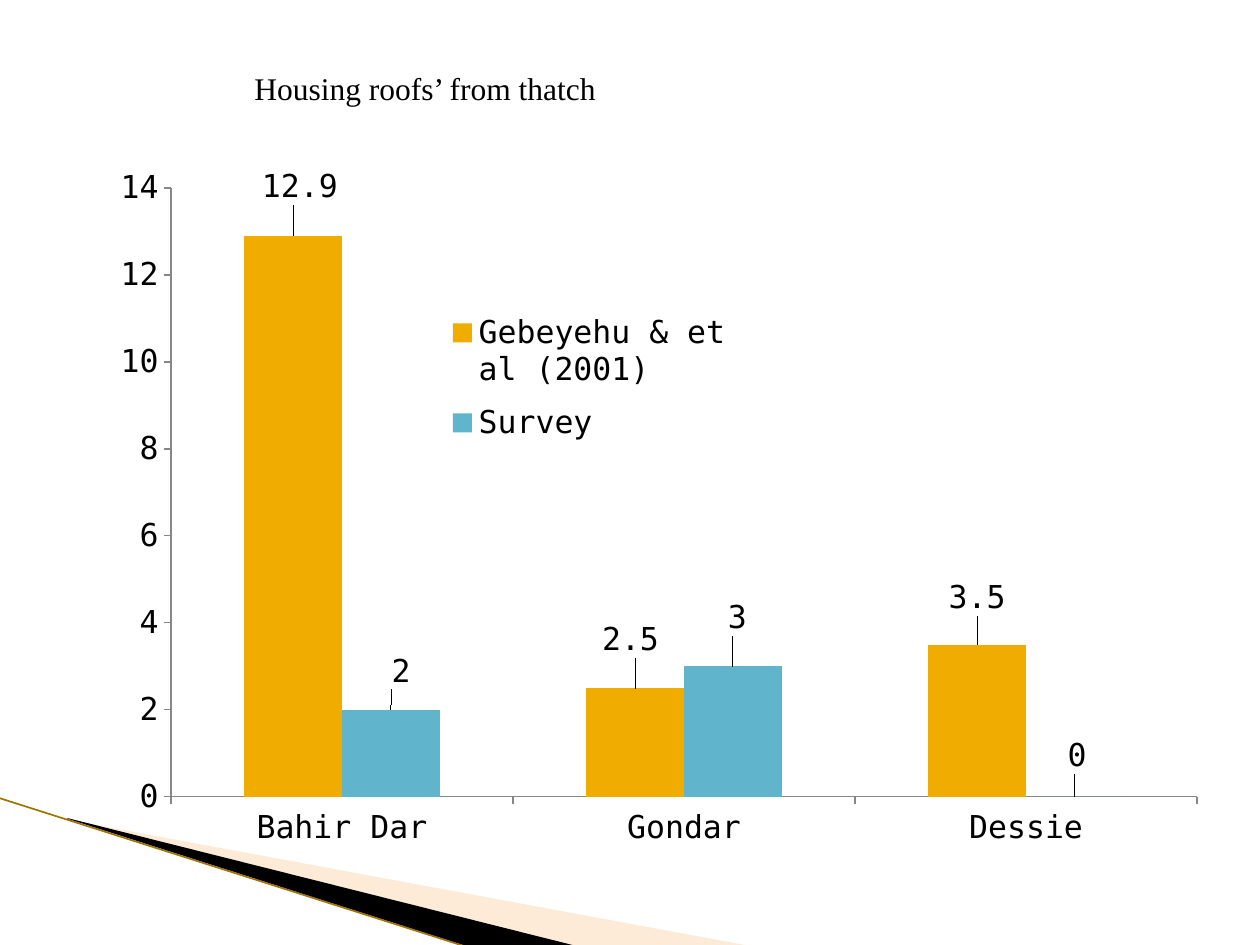
from dataclasses import dataclass
from typing import Any

from lxml.etree import SubElement
from pptx import Presentation
from pptx.chart.data import CategoryChartData
from pptx.dml.color import RGBColor
from pptx.enum.chart import XL_CHART_TYPE, XL_LABEL_POSITION, XL_LEGEND_POSITION, XL_TICK_MARK
from pptx.enum.text import MSO_AUTO_SIZE
from pptx.oxml import parse_xml
from pptx.oxml.ns import nsdecls, qn
from pptx.util import Pt

SCALE = 914400 / 126


@dataclass(frozen=True)
class Theme:
    text: str = "000000"
    axis: str = "878787"
    peach: str = "FCCF9B"
    black: str = "000000"
    edge: str = "A07400"
    gold: str = "F0AD00"
    blue: str = "60B5CC"
    size: int = 18
    title_font: str = "Times New Roman"
    chart_font: str = "DejaVu Sans Mono"


@dataclass(frozen=True)
class Box:
    left: int
    top: int
    width: int
    height: int

    def emu(self) -> list[int]:
        return [px(value) for value in (self.left, self.top, self.width, self.height)]


@dataclass(frozen=True)
class Wedge:
    points: tuple[tuple[int, int], ...]
    color: str
    opacity: int = 100


@dataclass(frozen=True)
class BarSeries:
    name: str
    values: tuple[float, ...]
    color: str
    label_shifts: tuple[tuple[int, int], ...]


THEME = Theme()
TITLE_BOX = Box(242, 63, 850, 50)
CHART_BOX = Box(84, 158, 1144, 714)
PLOT_BOX = Box(87, 30, 1026, 609)
LEGEND_BOX = Box(360, 140, 290, 160)
CATEGORIES = ("Bahir Dar", "Gondar", "Dessie")
WEDGES = (
    Wedge(((69, 820), (750, 946), (575, 946), (69, 819)), THEME.peach, 40),
    Wedge(((67, 818), (576, 946), (469, 947), (68, 819)), THEME.black),
)
SERIES = (
    BarSeries("Gebeyehu & et al (2001)", (12.9, 2.5, 3.5), THEME.gold, ((7, -26), (-5, -24), (0, -23))),
    BarSeries("Survey", (2, 3, 0), THEME.blue, ((10, -15), (5, -25), (2, -18))),
)


def px(value: int) -> int:
    return round(value * SCALE)


def rgb(color: str) -> RGBColor:
    return RGBColor.from_string(color)


def apply(target: Any, formats: dict[str, Any]) -> None:
    for name, value in formats.items():
        setattr(target, name, value)


def style_font(font: Any, family: str) -> None:
    apply(font, {"name": family, "size": Pt(THEME.size), "bold": False})
    font.color.rgb = rgb(THEME.text)


def layout_xml(values: dict[str, float], modes: dict[str, str]) -> Any:
    settings = {**modes, **{name: f"{value:.3f}" for name, value in values.items()}}
    children = "".join(f'<c:{name} val="{value}"/>' for name, value in settings.items())
    return parse_xml(f"<c:layout {nsdecls('c')}><c:manualLayout>{children}</c:manualLayout></c:layout>")


def area_layout(box: Box, modes: dict[str, str]) -> Any:
    fractions = {
        "x": box.left / CHART_BOX.width,
        "y": box.top / CHART_BOX.height,
        "w": box.width / CHART_BOX.width,
        "h": box.height / CHART_BOX.height,
    }
    return layout_xml(fractions, {**modes, "xMode": "edge", "yMode": "edge"})


def draw_wedge(page: Any, wedge: Wedge) -> None:
    builder = page.shapes.build_freeform(*wedge.points[0], scale=SCALE)
    builder.add_line_segments(wedge.points[1:], close=True)
    shape = builder.convert_to_shape()
    shape.shadow.inherit = False
    shape.fill.solid()
    shape.fill.fore_color.rgb = rgb(wedge.color)
    shape.line.fill.background()
    if wedge.opacity < 100:
        color = shape.fill._xPr.find(qn("a:solidFill"))[0]
        SubElement(color, qn("a:alpha")).set("val", str(wedge.opacity * 1000))


def draw_edge(page: Any) -> None:
    ends = [px(value) for value in (-1, 798, 467, 947)]
    line = page.shapes.add_connector(1, *ends)
    line.line.color.rgb = rgb(THEME.edge)
    line.line.width = Pt(0.95)
    SubElement(line._element.spPr, qn("a:effectLst"))


def style_axis(axis: Any) -> None:
    apply(axis, {
        "has_major_gridlines": False,
        "major_tick_mark": XL_TICK_MARK.OUTSIDE,
        "minor_tick_mark": XL_TICK_MARK.NONE,
    })
    axis.format.line.color.rgb = rgb(THEME.axis)
    axis.format.line.width = Pt(0.75)
    style_font(axis.tick_labels.font, THEME.chart_font)


def style_series(bars: Any, source: BarSeries) -> None:
    bars.format.fill.solid()
    bars.format.fill.fore_color.rgb = rgb(source.color)
    apply(bars.data_labels, {"show_value": True, "position": XL_LABEL_POSITION.OUTSIDE_END})
    style_font(bars.data_labels.font, THEME.chart_font)
    for index, (across, down) in enumerate(source.label_shifts):
        label = bars.points[index].data_label
        label.position = XL_LABEL_POSITION.OUTSIDE_END
        style_font(label.font, THEME.chart_font)
        shift = {"x": across / CHART_BOX.width, "y": down / CHART_BOX.height}
        element = bars._element.xpath(f"c:dLbls/c:dLbl[c:idx/@val='{index}']")[0]
        element.insert(1, layout_xml(shift, {}))


def draw_chart(page: Any) -> None:
    data = CategoryChartData()
    data.categories = CATEGORIES
    for source in SERIES:
        data.add_series(source.name, source.values)
    chart = page.shapes.add_chart(XL_CHART_TYPE.COLUMN_CLUSTERED, *CHART_BOX.emu(), data).chart
    apply(chart, {"has_title": False, "has_legend": True})
    style_font(chart.font, THEME.chart_font)
    apply(chart.plots[0], {"gap_width": 150, "overlap": 0, "vary_by_categories": False})
    for axis in (chart.category_axis, chart.value_axis):
        style_axis(axis)
    apply(chart.value_axis, {"minimum_scale": 0, "maximum_scale": 14, "major_unit": 2})
    for bars, source in zip(chart.plots[0].series, SERIES):
        style_series(bars, source)
    apply(chart.legend, {"position": XL_LEGEND_POSITION.RIGHT, "include_in_layout": False})
    style_font(chart.legend.font, THEME.chart_font)
    legend = chart.legend._element
    plot_area = chart._chartSpace.chart.plotArea
    for parent in (legend, plot_area):
        for old in parent.findall(qn("c:layout")):
            parent.remove(old)
    legend.find(qn("c:legendPos")).addnext(area_layout(LEGEND_BOX, {}))
    plot_area.insert(0, area_layout(PLOT_BOX, {"layoutTarget": "inner"}))


def draw_title(page: Any) -> None:
    frame = page.shapes.add_textbox(*TITLE_BOX.emu()).text_frame
    apply(frame, {"word_wrap": True, "auto_size": MSO_AUTO_SIZE.SHAPE_TO_FIT_TEXT})
    span = frame.paragraphs[0].add_run()
    span.text = "Housing roofs’ from thatch"
    style_font(span.font, THEME.title_font)


def main() -> None:
    deck = Presentation()
    apply(deck, {"slide_width": px(1260), "slide_height": px(945)})
    page = deck.slides.add_slide(deck.slide_layouts[6])
    for wedge in WEDGES:
        draw_wedge(page, wedge)
    draw_edge(page)
    draw_chart(page)
    draw_title(page)
    deck.save("out.pptx")


if __name__ == "__main__":
    main()
